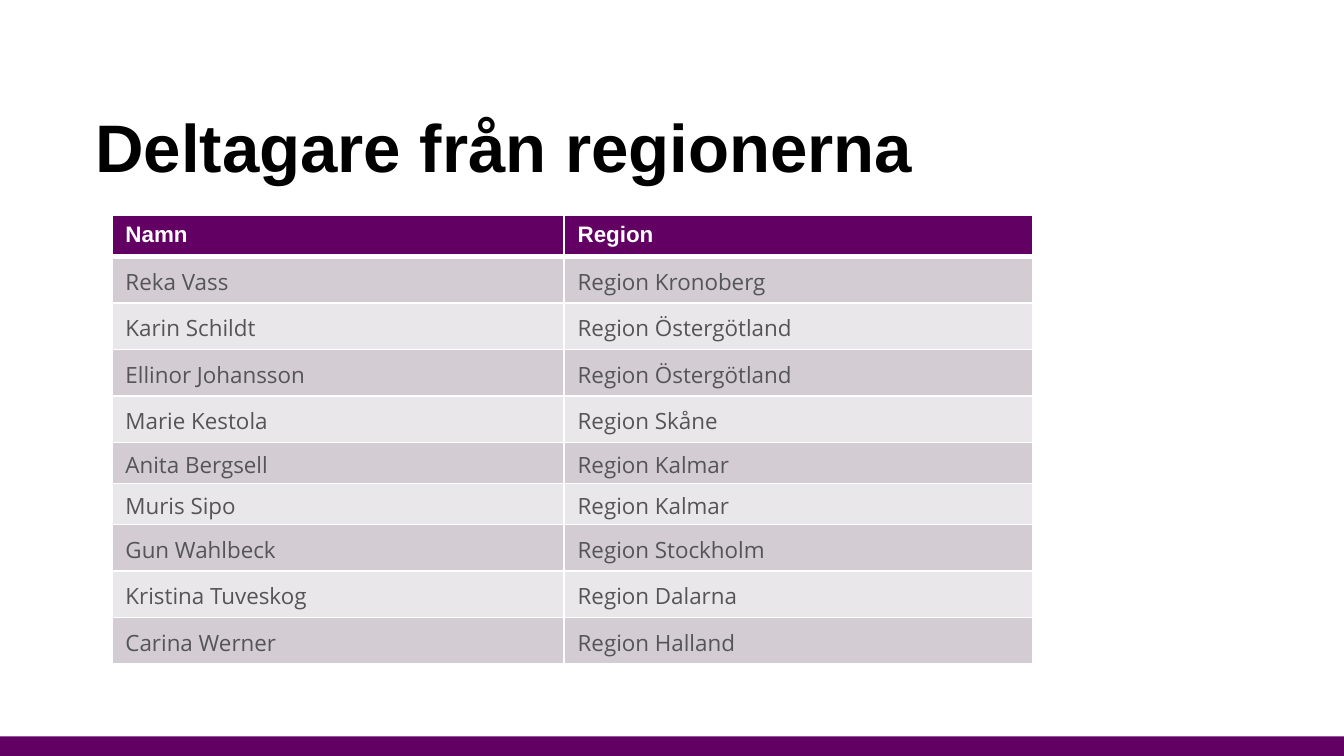
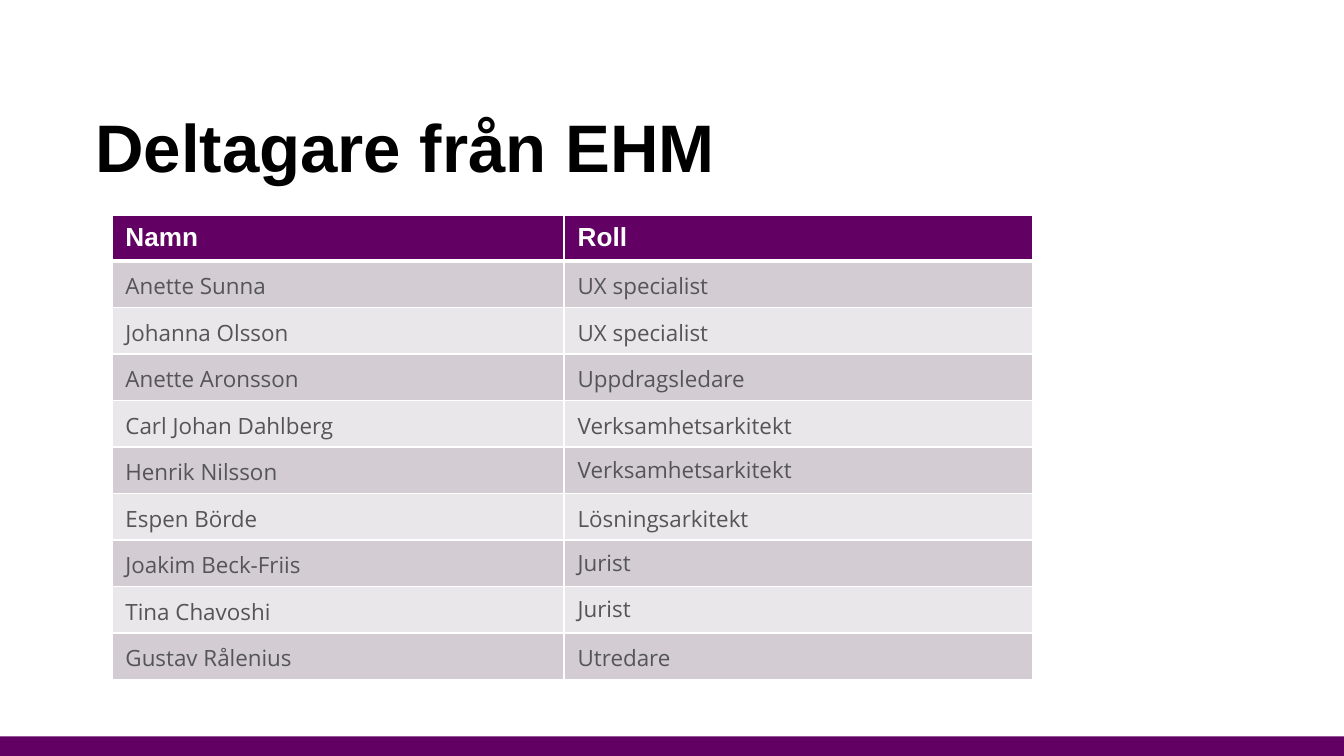
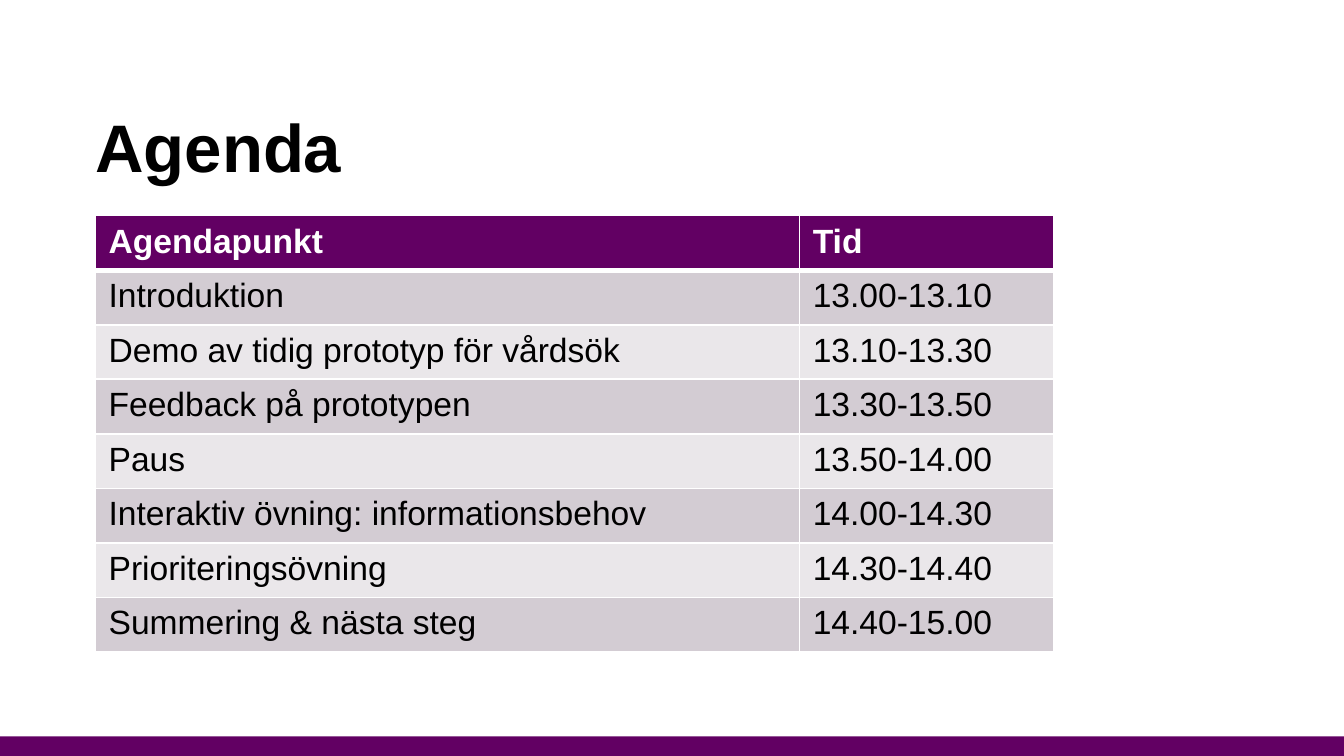
import pptx
import pptx.util
import pptx.dml.color
import pptx.enum.shapes
import pptx.oxml
import pptx.oxml.ns

PX = 9525
SLIDE_WIDTH, SLIDE_HEIGHT = 960, 540
BAND_BOX = (0, 526, 960, 14)
TITLE_BOX = (68, 78, 742, 50)

PURPLE = pptx.dml.color.RGBColor(0x62, 0x00, 0x63)
DARK_ROW = pptx.dml.color.RGBColor(0xD3, 0xCC, 0xD3)
LIGHT_ROW = pptx.dml.color.RGBColor(0xEA, 0xE7, 0xEA)
WHITE = pptx.dml.color.RGBColor(0xFF, 0xFF, 0xFF)
BLACK = pptx.dml.color.RGBColor(0x00, 0x00, 0x00)
GREY = pptx.dml.color.RGBColor(0x55, 0x55, 0x55)

ROOMY, NORMAL = 7, 5
PEOPLE_COLUMNS = (323, 335)
PEOPLE_ROWS = [27] + [31] * 4 + [27] * 5
PEOPLE_STYLE = ("Open Sans", 12, GREY)
AGENDA_STYLE = ("Arial", 18, BLACK)

REGION_ROWS = [
    ("Namn", "Region"),
    ("Reka Vass", "Region Kronoberg"),
    ("Karin Schildt", "Region Östergötland"),
    ("Ellinor Johansson", "Region Östergötland"),
    ("Marie Kestola", "Region Skåne"),
    ("Anita Bergsell", "Region Kalmar"),
    ("Muris Sipo", "Region Kalmar"),
    ("Gun Wahlbeck", "Region Stockholm"),
    ("Kristina Tuveskog", "Region Dalarna"),
    ("Carina Werner", "Region Halland"),
]
EHM_ROWS = [
    ("Namn", "Roll"),
    ("Anette Sunna", "UX specialist"),
    ("Johanna Olsson", "UX specialist"),
    ("Anette Aronsson", "Uppdragsledare"),
    ("Carl Johan Dahlberg", "Verksamhetsarkitekt"),
    ("Henrik Nilsson", "Verksamhetsarkitekt"),
    ("Espen Börde", "Lösningsarkitekt"),
    ("Joakim Beck-Friis", "Jurist"),
    ("Tina Chavoshi", "Jurist"),
    ("Gustav Rålenius", "Utredare"),
]
AGENDA_ROWS = [
    ("Agendapunkt", "Tid"),
    ("Introduktion", "13.00-13.10"),
    ("Demo av tidig prototyp för vårdsök", "13.10-13.30"),
    ("Feedback på prototypen", "13.30-13.50"),
    ("Paus", "13.50-14.00"),
    ("Interaktiv övning: informationsbehov", "14.00-14.30"),
    ("Prioriteringsövning", "14.30-14.40"),
    ("Summering & nästa steg", "14.40-15.00"),
]


def scaled(box):
    return [length * PX for length in box]


def style_text(paragraph, font_name, size, color, bold=False):
    for run in paragraph.runs:
        run.font.name = font_name
        run.font.size = pptx.util.Pt(size)
        run.font.color.rgb = color
        run.font.bold = bold


def add_band(slide, box):
    band = slide.shapes.add_shape(
        pptx.enum.shapes.MSO_SHAPE.RECTANGLE, *scaled(box))
    band.shadow.inherit = False
    band.fill.solid()
    band.fill.fore_color.rgb = PURPLE
    band.line.fill.background()


def add_title(slide, box, wording):
    title_frame = slide.shapes.add_textbox(*scaled(box)).text_frame
    title_frame.word_wrap = True
    title_frame.margin_left = title_frame.margin_right = 0
    title_frame.margin_top = title_frame.margin_bottom = 0
    title_frame.text = wording
    heading = title_frame.paragraphs[0]
    heading.line_spacing = pptx.util.Pt(41)
    style_text(heading, "Arial", 36, BLACK, True)


def add_borders(cell, row_index):
    properties = cell._tc.get_or_add_tcPr()
    widths = {
        "lnL": 1,
        "lnR": 1,
        "lnT": 3 if row_index == 1 else 1,
        "lnB": 3 if row_index == 0 else 1,
    }
    for edge, width in widths.items():
        properties.append(pptx.oxml.parse_xml(
            f'<a:{edge} {pptx.oxml.ns.nsdecls("a")} w="{pptx.util.Pt(width)}">'
            f'<a:solidFill><a:srgbClr val="{WHITE}"/></a:solidFill></a:{edge}>'))


def fill_cell(cell, row_index, wording, inset, text_style):
    cell.margin_top = cell.margin_bottom = inset * PX
    add_borders(cell, row_index)
    cell.fill.solid()
    if row_index == 0:
        cell.fill.fore_color.rgb = PURPLE
    else:
        cell.fill.fore_color.rgb = DARK_ROW if row_index % 2 else LIGHT_ROW
    cell.text_frame.text = wording
    style_text(cell.text_frame.paragraphs[0], *text_style)


def add_schedule(slide, box, columns, row_heights, rows, header_size,
                 body_style, body_inset, normal_cells=()):
    frame = slide.shapes.add_table(len(rows), len(columns), *scaled(box))
    table = frame.table
    for column, width in zip(table.columns, columns):
        column.width = width * PX
    for row, height in zip(table.rows, row_heights):
        row.height = height * PX
    frame.height = box[3] * PX
    header_style = ("Arial", header_size, WHITE, True)
    for row_index, row in enumerate(rows):
        for column_index, wording in enumerate(row):
            is_header = row_index == 0
            is_normal = is_header or (row_index, column_index) in normal_cells
            fill_cell(table.cell(row_index, column_index), row_index, wording,
                      NORMAL if is_normal else body_inset,
                      header_style if is_header else body_style)


def add_slide(deck, title):
    slide = deck.slides.add_slide(deck.slide_layouts[6])
    add_band(slide, BAND_BOX)
    add_title(slide, TITLE_BOX, title)
    return slide


def main():
    deck = pptx.Presentation()
    deck.slide_width = SLIDE_WIDTH * PX
    deck.slide_height = SLIDE_HEIGHT * PX

    regions = add_slide(deck, "Deltagare från regionerna")
    add_schedule(regions, (80, 154, 658, 319), PEOPLE_COLUMNS, PEOPLE_ROWS,
                 REGION_ROWS, 12, PEOPLE_STYLE, ROOMY,
                 {(5, 0), (5, 1), (6, 0), (6, 1)})

    ehm = add_slide(deck, "Deltagare från EHM")
    add_schedule(ehm, (80, 154, 658, 331), PEOPLE_COLUMNS, PEOPLE_ROWS,
                 EHM_ROWS, 14, PEOPLE_STYLE, ROOMY,
                 {(5, 1), (7, 1), (8, 1)})

    agenda = add_slide(deck, "Agenda")
    add_schedule(agenda, (68, 154, 685, 311), (503, 182),
                 [39] * len(AGENDA_ROWS), AGENDA_ROWS, 18, AGENDA_STYLE, NORMAL)

    deck.save("out.pptx")


if __name__ == "__main__":
    main()
